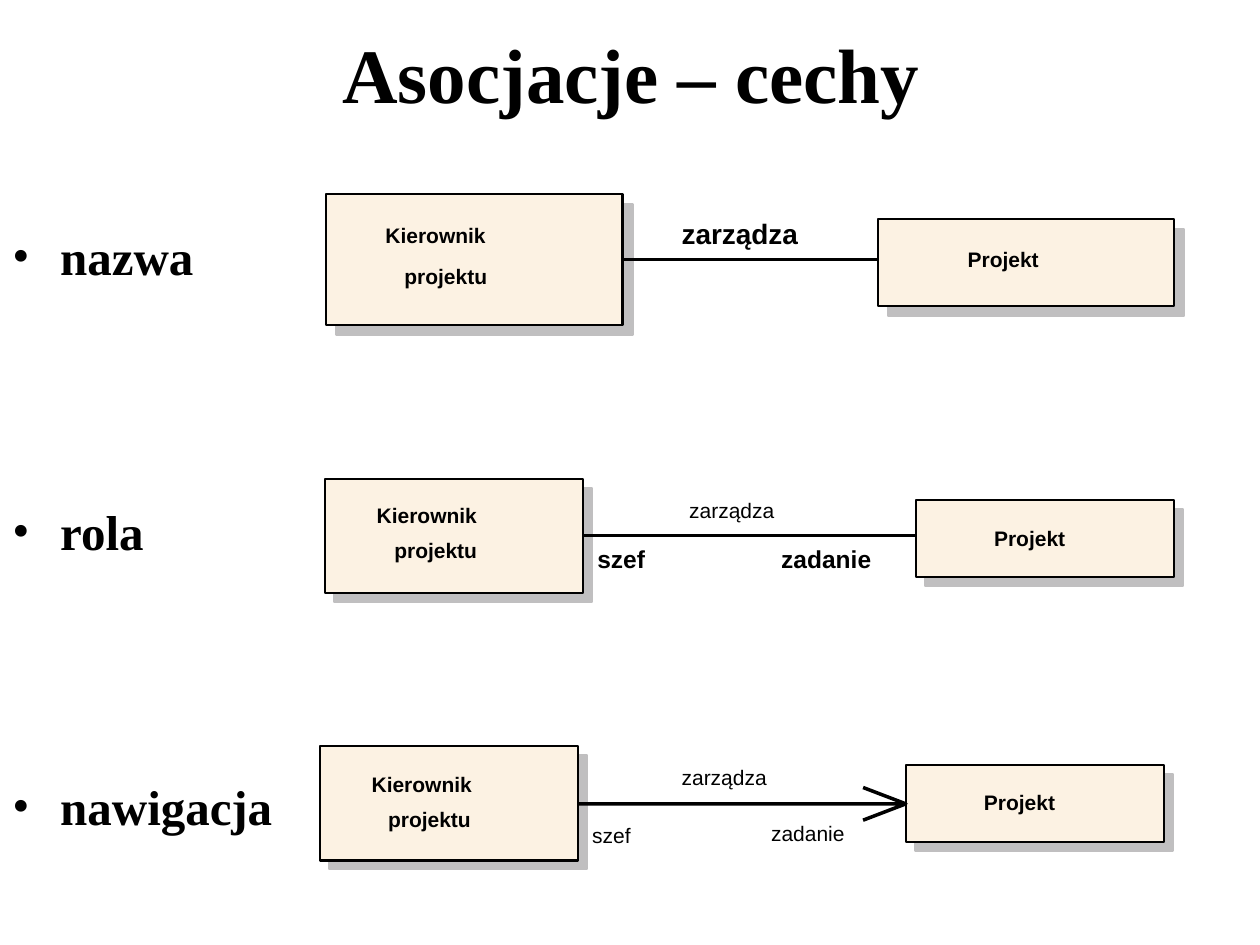
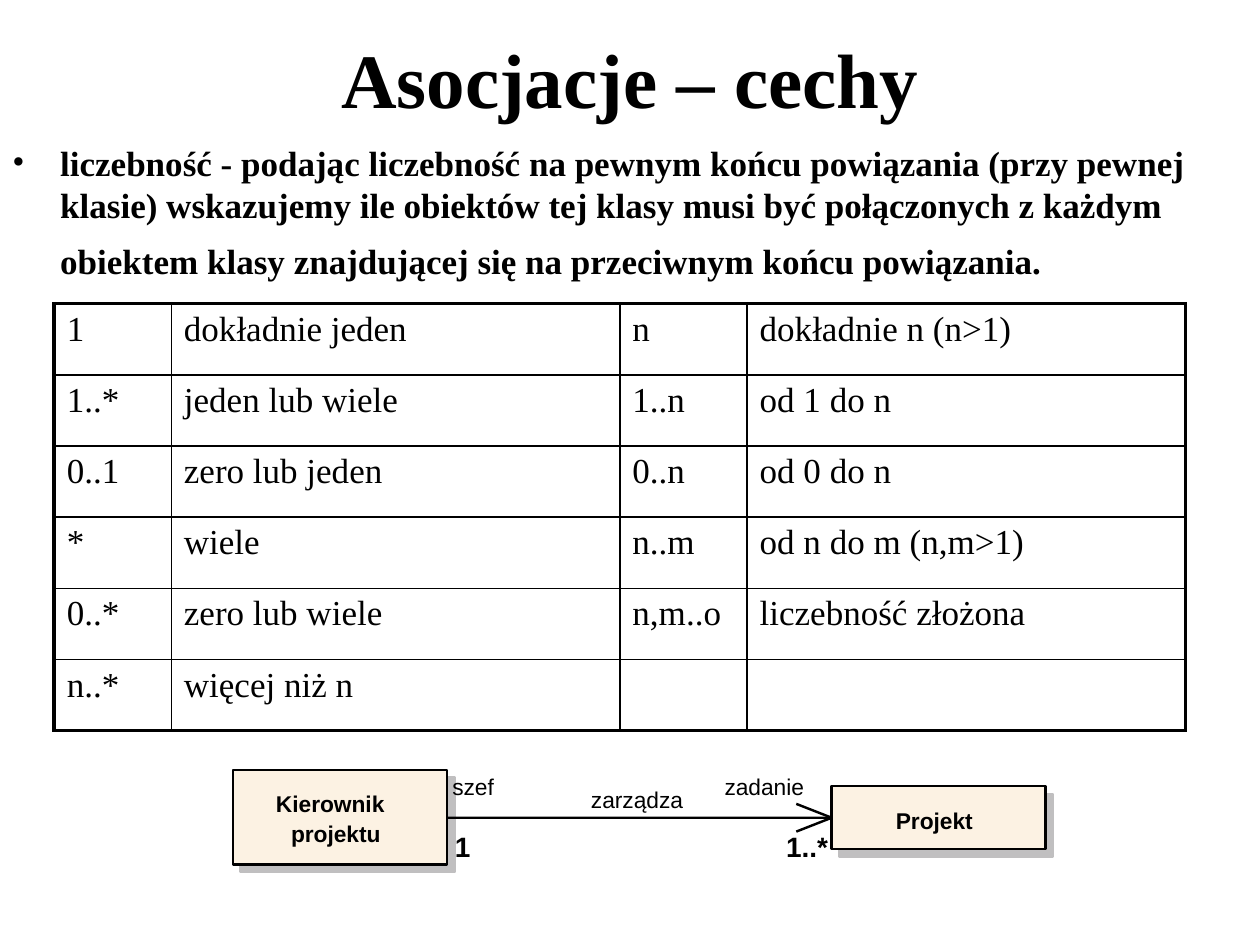
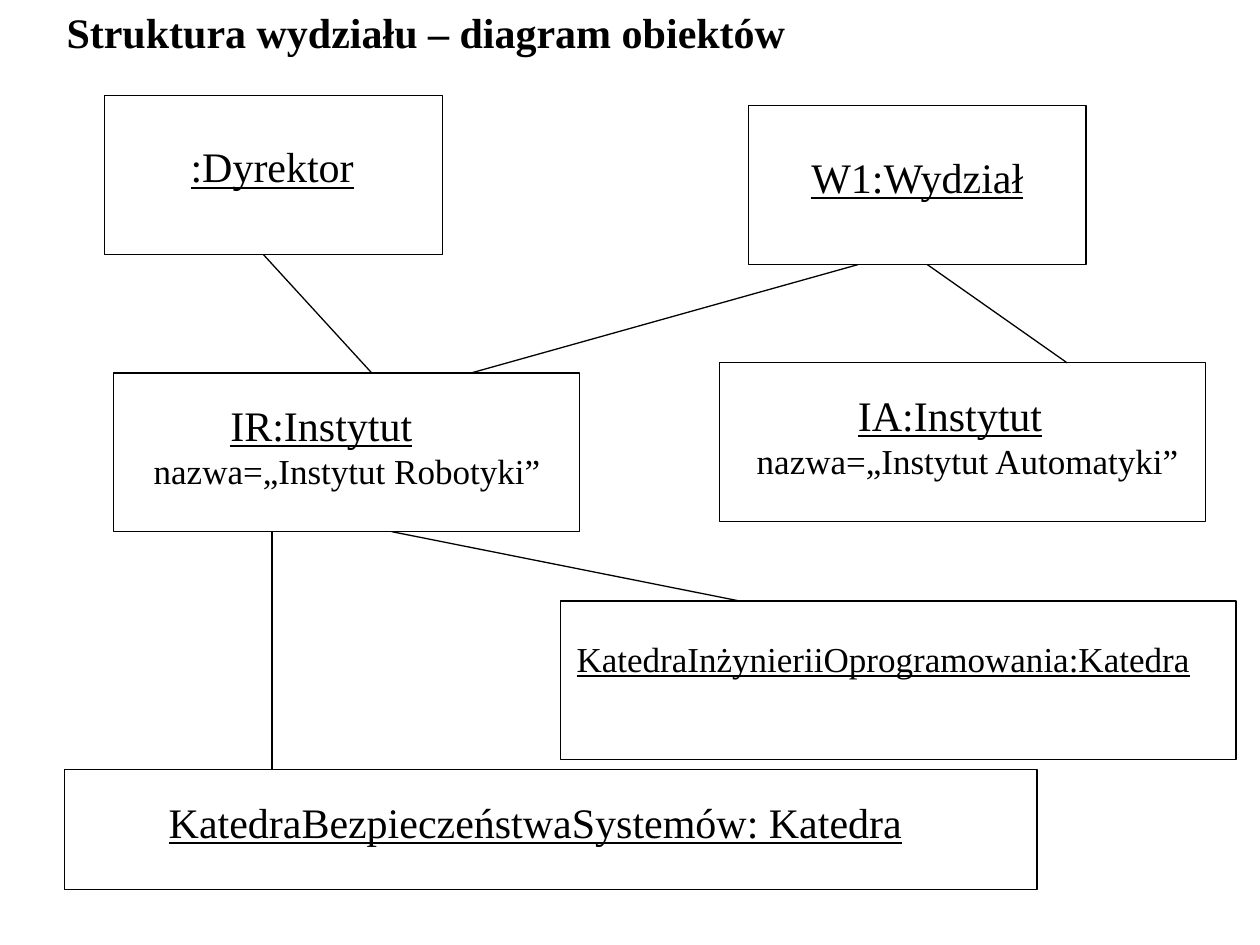
from dataclasses import dataclass

import pptx
import pptx.dml.color
import pptx.enum.shapes
import pptx.enum.text
import pptx.oxml
import pptx.oxml.ns
import pptx.util
from pptx.util import Inches

ALIGN = pptx.enum.text.PP_ALIGN
ANCHOR = pptx.enum.text.MSO_ANCHOR


@dataclass(frozen=True)
class Theme:
    serif: str = "Times New Roman"
    sans: str = "Arial"
    ink: str = "000000"
    class_fill: str = "FCF2E3"
    shadow: str = "C0BFC0"
    title: int = 44
    bullet: int = 28
    heading: int = 24
    body: int = 20
    thin: float = 0.75
    grid: float = 1
    frame: float = 2.25


THEME = Theme()


@dataclass(frozen=True)
class Box:
    left: float
    top: float
    width: float
    height: float

    def lengths(self) -> tuple:
        return tuple(Inches(v) for v in (self.left, self.top, self.width, self.height))

    def shifted(self, offset: float) -> "Box":
        return Box(self.left + offset, self.top + offset, self.width, self.height)


@dataclass(frozen=True)
class Label:
    text: str
    left: float
    top: float
    width: float
    size: float = 12
    bold: bool = False


@dataclass(frozen=True)
class Association:
    """Two classes joined by a line, with an open arrowhead when head is set."""
    manager: Box
    project: Box
    line_y: float
    line_width: float
    labels: tuple[Label, ...]
    border: float = 1.25
    shadow_offset: float = 0.07
    head: tuple[float, float] | None = None


@dataclass(frozen=True)
class ObjectBox:
    frame: Box
    text_area: Box
    name: str
    size: int = THEME.heading
    attribute: str = ""
    name_indent: float = 0


ASSOCIATIONS = (
    Association(
        Box(2.59, 1.54, 2.35, 1.04), Box(6.97, 1.74, 2.35, 0.69), 2.06, 1.25,
        (Label("Kierownik", 3.06, 1.77, 1.04, bold=True),
         Label("projektu", 3.21, 2.09, 0.81, bold=True),
         Label("Projekt", 7.68, 1.96, 0.69, bold=True),
         Label("zarządza", 5.41, 1.72, 1.14, 16, True)),
        shadow_offset=0.08),
    Association(
        Box(2.58, 3.8, 2.05, 0.91), Box(7.27, 3.97, 2.05, 0.61), 4.25, 1.25,
        (Label("Kierownik", 2.99, 3.99, 1.1, bold=True),
         Label("projektu", 3.13, 4.27, 0.86, bold=True),
         Label("Projekt", 7.89, 4.17, 0.73, bold=True),
         Label("szef", 4.74, 4.32, 0.49, 14, True),
         Label("zarządza", 5.47, 3.95, 0.88),
         Label("zadanie", 6.2, 4.32, 0.92, 14, True))),
    Association(
        Box(2.54, 5.92, 2.05, 0.91), Box(7.19, 6.07, 2.05, 0.61), 6.38, 2,
        (Label("Kierownik", 2.95, 6.12, 1.14, bold=True),
         Label("projektu", 3.08, 6.4, 0.89, bold=True),
         Label("Projekt", 7.81, 6.27, 0.76, bold=True),
         Label("szef", 4.7, 6.53, 0.41),
         Label("zarządza", 5.41, 6.07, 0.91),
         Label("zadanie", 6.12, 6.51, 0.78)),
        head=(0.34, 0.13)),
)

MULTIPLICITY_ASSOCIATION = Association(
    Box(1.85, 6.11, 1.7, 0.75), Box(6.6, 6.24, 1.7, 0.5), 6.49, 1.38,
    (Label("Kierownik", 2.19, 6.27, 0.95, 13, True),
     Label("projektu", 2.31, 6.51, 0.78, 13, True),
     Label("Projekt", 7.11, 6.4, 0.68, 13, True),
     Label("szef", 3.59, 6.13, 0.4, 13),
     Label("1", 3.61, 6.58, 0.18, 16, True),
     Label("zarządza", 4.69, 6.24, 0.82, 13),
     Label("zadanie", 5.75, 6.13, 0.72, 13),
     Label("1..*", 6.24, 6.58, 0.4, 16, True)),
    border=1.38, shadow_offset=0.06, head=(0.28, 0.11))

MULTIPLICITIES = (
    ("1", "dokładnie jeden", "n", "dokładnie n (n>1)"),
    ("1..*", "jeden lub wiele", "1..n", "od 1 do n"),
    ("0..1", "zero lub jeden", "0..n", "od 0 do n"),
    ("*", "wiele", "n..m", "od n do m (n,m>1)"),
    ("0..*", "zero lub wiele", "n,m..o", "liczebność złożona"),
    ("n..*", "więcej niż n", "", ""),
)
COLUMN_WIDTHS = (0.93, 3.56, 1.01, 3.48)
TABLE_HEIGHT = 3.39

OBJECTS = (
    ObjectBox(Box(0.83, 0.76, 2.68, 1.26), Box(0.9, 1.07, 2.52, 0.5), ":Dyrektor"),
    ObjectBox(Box(5.94, 0.84, 2.68, 1.26), Box(6.02, 1.15, 2.52, 0.5), "W1:Wydział"),
    ObjectBox(Box(0.9, 2.96, 3.7, 1.26), Box(1.06, 3.12, 3.39, 0.83), "IR:Instytut",
              attribute="nazwa=„Instytut Robotyki”", name_indent=0.67),
    ObjectBox(Box(5.71, 2.88, 3.86, 1.26), Box(5.79, 3.04, 3.78, 0.83), "IA:Instytut",
              attribute="nazwa=„Instytut Automatyki”", name_indent=0.92),
    ObjectBox(Box(0.51, 6.11, 7.72, 0.95), Box(0.67, 6.27, 7.16, 0.5),
              "KatedraBezpieczeństwaSystemów: Katedra"),
    ObjectBox(Box(4.45, 4.77, 5.36, 1.26), Box(4.45, 5.01, 5.12, 0.43),
              "KatedraInżynieriiOprogramowania:Katedra", THEME.body),
)
OBJECT_LINKS = (
    ((2.09, 2.02), (2.95, 2.96)),
    ((6.81, 2.1), (3.74, 2.96)),
    ((7.36, 2.1), (8.47, 2.88)),
    ((3.11, 4.22), (5.87, 4.77)),
    ((2.16, 4.22), (2.16, 6.11)),
)


def rgb(color: str) -> pptx.dml.color.RGBColor:
    return pptx.dml.color.RGBColor.from_string(color)


def set_line(shape, width: float, color: str = THEME.ink) -> None:
    shape.line.color.rgb = rgb(color)
    shape.line.width = pptx.util.Pt(width)


def format_run(run, size: float, bold: bool = False, underline: bool = False,
               font: str = THEME.serif) -> None:
    run.font.name = font
    run.font.size = pptx.util.Pt(size)
    run.font.bold = bold
    run.font.underline = underline
    run.font.color.rgb = rgb(THEME.ink)


def add_text(slide, box: Box, text: str, size: float, bold: bool = False,
             underline: bool = False, font: str = THEME.serif,
             align: ALIGN = ALIGN.LEFT, anchor: ANCHOR = ANCHOR.TOP):
    text_frame = slide.shapes.add_textbox(*box.lengths()).text_frame
    text_frame.word_wrap = True
    text_frame.vertical_anchor = anchor
    text_frame.text = text
    for paragraph in text_frame.paragraphs:
        paragraph.alignment = align
        for run in paragraph.runs:
            format_run(run, size, bold, underline, font)
    return text_frame


def add_title(slide, box: Box) -> None:
    add_text(slide, box, "Asocjacje – cechy", THEME.title, bold=True,
             align=ALIGN.CENTER, anchor=ANCHOR.MIDDLE)


def add_bullet(paragraph) -> None:
    properties = paragraph._p.get_or_add_pPr()
    properties.set("marL", str(Inches(0.38)))
    properties.set("indent", str(-Inches(0.38)))
    for tag, attributes in (("a:buFont", {"typeface": THEME.serif}),
                            ("a:buChar", {"char": "•"})):
        properties.append(properties.makeelement(pptx.oxml.ns.qn(tag), attributes))


def add_rectangle(slide, box: Box, width: float, fill: str | None = None,
                  line: str = THEME.ink) -> None:
    shape = slide.shapes.add_shape(
        pptx.enum.shapes.MSO_SHAPE.RECTANGLE, *box.lengths())
    shape.shadow.inherit = False
    if fill:
        shape.fill.solid()
        shape.fill.fore_color.rgb = rgb(fill)
    else:
        shape.fill.background()
    set_line(shape, width, line)


def add_line(slide, start: tuple[float, float], end: tuple[float, float],
             width: float) -> None:
    connector = slide.shapes.add_connector(
        pptx.enum.shapes.MSO_CONNECTOR.STRAIGHT,
        *(Inches(value) for value in start + end))
    set_line(connector, width)
    properties = connector._element.spPr
    properties.append(properties.makeelement(pptx.oxml.ns.qn("a:effectLst"), {}))


def add_open_arrow(slide, start: tuple[float, float], tip: tuple[float, float],
                   head: tuple[float, float], width: float) -> None:
    """Draw the shaft with the lower barb in one outline, then the upper barb."""
    back, rise = head
    points = [(Inches(x), Inches(y))
              for x, y in (start, tip, (tip[0] - back, tip[1] + rise))]
    builder = slide.shapes.build_freeform(*points[0])
    builder.add_line_segments(points[1:], close=False)
    shape = builder.convert_to_shape()
    shape.shadow.inherit = False
    shape.fill.background()
    set_line(shape, width)
    add_line(slide, tip, (tip[0] - back, tip[1] - rise), width)


def add_label(slide, label: Label) -> None:
    box = Box(label.left, label.top, label.width, label.size / 50)
    text_frame = add_text(slide, box, label.text, label.size, label.bold, font=THEME.sans)
    text_frame.margin_left = text_frame.margin_right = 0
    text_frame.margin_top = text_frame.margin_bottom = 0
    text_frame.word_wrap = False
    text_frame.auto_size = pptx.enum.text.MSO_AUTO_SIZE.SHAPE_TO_FIT_TEXT


def add_association(slide, association: Association) -> None:
    manager, project = association.manager, association.project
    for box in (manager, project):
        add_rectangle(slide, box.shifted(association.shadow_offset),
                      association.border, THEME.shadow, THEME.shadow)
        add_rectangle(slide, box, association.border, THEME.class_fill)
    start = (manager.left + manager.width, association.line_y)
    end = (project.left, association.line_y)
    if association.head:
        add_open_arrow(slide, start, end, association.head, association.line_width)
    else:
        add_line(slide, start, end, association.line_width)
    for label in association.labels:
        add_label(slide, label)


def set_cell_borders(cell, widths: dict[str, float]) -> None:
    properties = cell._tc.get_or_add_tcPr()
    for position, (side, width) in enumerate(widths.items()):
        border = pptx.oxml.parse_xml(
            f'<a:{side} {pptx.oxml.ns.nsdecls("a")} w="{pptx.util.Pt(width)}">'
            f'<a:solidFill><a:srgbClr val="{THEME.ink}"/></a:solidFill></a:{side}>')
        properties.insert(position, border)


def add_multiplicity_table(slide) -> None:
    last_row, last_column = len(MULTIPLICITIES) - 1, len(COLUMN_WIDTHS) - 1
    box = Box(0.43, 2.41, sum(COLUMN_WIDTHS), TABLE_HEIGHT)
    table = slide.shapes.add_table(
        len(MULTIPLICITIES), len(COLUMN_WIDTHS), *box.lengths()).table
    table.first_row = table.horz_banding = False
    for column, width in zip(table.columns, COLUMN_WIDTHS):
        column.width = Inches(width)
    for row_index, texts in enumerate(MULTIPLICITIES):
        for column_index, text in enumerate(texts):
            cell = table.cell(row_index, column_index)
            cell.fill.background()
            cell.text_frame.text = text
            for run in cell.text_frame.paragraphs[0].runs:
                format_run(run, THEME.body)
            outer_sides = {"lnL": column_index == 0, "lnR": column_index == last_column,
                           "lnT": row_index == 0, "lnB": row_index == last_row}
            set_cell_borders(cell, {side: THEME.frame if outer else THEME.grid
                                    for side, outer in outer_sides.items()})


def add_object(slide, item: ObjectBox) -> None:
    add_rectangle(slide, item.frame, THEME.thin)
    text_frame = add_text(slide, item.text_area, item.name, item.size,
                          underline=True, align=ALIGN.CENTER)
    if item.attribute:
        name = text_frame.paragraphs[0]
        name.alignment = ALIGN.LEFT
        name._p.get_or_add_pPr().set("marL", str(Inches(item.name_indent)))
        attribute = text_frame.add_paragraph()
        attribute.text = item.attribute
        attribute.alignment = ALIGN.CENTER
        format_run(attribute.runs[0], THEME.body)


def build_features_slide(slide) -> None:
    add_title(slide, Box(0.51, 0, 9, 1.15))
    features = add_text(slide, Box(0, 1.75, 10, 5.75), "nazwa\nrola\nnawigacja",
                        THEME.bullet, bold=True)
    for index, paragraph in enumerate(features.paragraphs):
        if index:
            paragraph.space_before = pptx.util.Pt(123.5)
        add_bullet(paragraph)
    for association in ASSOCIATIONS:
        add_association(slide, association)


def build_multiplicity_slide(slide) -> None:
    add_title(slide, Box(0.5, 0, 9, 1.23))
    definition = add_text(
        slide, Box(0, 1.07, 10, 6.43),
        "liczebność - podając liczebność na pewnym końcu powiązania (przy pewnej "
        "klasie) wskazujemy ile obiektów tej klasy musi być połączonych z każdym "
        "obiektem klasy znajdującej się na przeciwnym końcu powiązania.",
        THEME.body, bold=True).paragraphs[0]
    add_bullet(definition)
    closing_space = definition.add_run()
    closing_space.text = " "
    format_run(closing_space, THEME.bullet)
    add_multiplicity_table(slide)
    add_association(slide, MULTIPLICITY_ASSOCIATION)


def build_objects_slide(slide) -> None:
    for item in OBJECTS:
        add_object(slide, item)
    for start, end in OBJECT_LINKS:
        add_line(slide, start, end, THEME.thin)
    add_text(slide, Box(0.43, 0, 7.32, 0.5), "Struktura wydziału – diagram obiektów",
             THEME.heading, bold=True)


def main() -> None:
    presentation = pptx.Presentation()
    presentation.slide_width = Inches(10)
    presentation.slide_height = Inches(7.5)
    blank_layout = presentation.slide_layouts[6]
    for build in (build_features_slide, build_multiplicity_slide, build_objects_slide):
        build(presentation.slides.add_slide(blank_layout))
    presentation.save("out.pptx")


if __name__ == "__main__":
    main()
